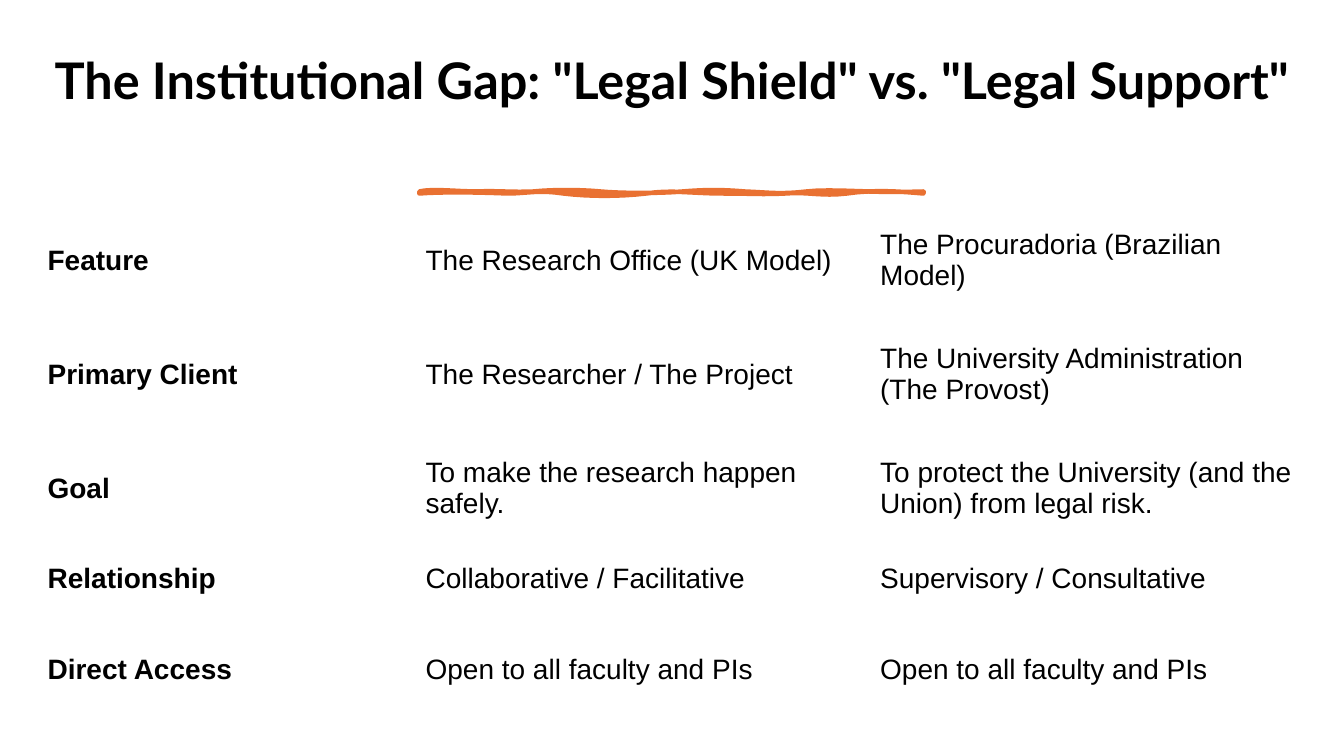
from dataclasses import dataclass

import pptx
import pptx.dml.color
import pptx.enum.text
import pptx.util

Pt = pptx.util.Pt
MIDDLE = pptx.enum.text.MSO_ANCHOR.MIDDLE
COLOURS = {"text": "000000", "accent": "E97132"}
CURVE_STEPS = 8


@dataclass(frozen=True)
class Comparison:
    feature: str
    research_office: str
    procuradoria: str
    height: float = 81.36


@dataclass(frozen=True)
class Curve:
    """A cubic curve that starts where the previous one ended."""
    control_1: tuple[float, float]
    control_2: tuple[float, float]
    end: tuple[float, float]


COLUMN_WIDTHS = (270, 324.72, 313.92)
COMPARISONS = (
    Comparison("Feature", "The Research Office (UK Model)",
               "The Procuradoria (Brazilian Model)"),
    Comparison("Primary Client", "The Researcher / The Project",
               "The University Administration (The Provost)"),
    Comparison("Goal", "To make the research happen safely.",
               "To protect the University (and the Union) from legal risk."),
    Comparison("Relationship", "Collaborative / Facilitative",
               "Supervisory / Consultative", 48.24),
    Comparison("Direct Access", "Open to all faculty and PIs",
               "Open to all faculty and PIs"),
)

STROKE_START = (299.5, 136.8)
STROKE_CURVES = (
    Curve((308.2, 134.6), (326.9, 136.8), (340.6, 136.8)),
    Curve((354.2, 136.1), (366.5, 137.5), (380.9, 136.8)),
    Curve((395.3, 135.4), (413.3, 135.4), (429.1, 136.8)),
    Curve((444.2, 138.2), (470.2, 138.2), (487.4, 136.8)),
    Curve((505.4, 135.4), (514.1, 135.4), (532.1, 136.8)),
    Curve((549.4, 137.5), (557.3, 139), (576, 136.8)),
    Curve((594.7, 134.6), (624.2, 138.2), (659.5, 136.8)),
    Curve((660.2, 137.5), (659.5, 137.5), (659.5, 138.2)),
    Curve((644.4, 136.8), (622.8, 135.4), (604.8, 138.2)),
    Curve((586.8, 140.4), (576.7, 136.8), (560.9, 138.2)),
    Curve((544.3, 139), (537.8, 138.2), (516.2, 138.2)),
    Curve((494.6, 138.2), (480.2, 135.4), (461.5, 138.2)),
    Curve((442.1, 140.4), (421.2, 140.4), (402.5, 138.2)),
    Curve((384.5, 135.4), (376.6, 138.2), (362.2, 138.2)),
    Curve((347.8, 137.5), (315.4, 136.8), (299.5, 138.2)),
)


def colour(name: str) -> pptx.dml.color.RGBColor:
    return pptx.dml.color.RGBColor.from_string(COLOURS[name])


def style_font(font, name: str, size: float, bold: bool) -> None:
    font.name = name
    font.size = Pt(size)
    font.bold = bold
    font.color.rgb = colour("text")


def add_title(page, text: str) -> None:
    box = page.shapes.add_textbox(Pt(0), Pt(33.12), Pt(960), Pt(98.64))
    frame = box.text_frame
    frame.word_wrap = True
    frame.vertical_anchor = MIDDLE
    frame.margin_bottom = Pt(49)
    frame.text = text
    para = frame.paragraphs[0]
    para.alignment = pptx.enum.text.PP_ALIGN.CENTER
    para.line_spacing = 0.9
    style_font(para.runs[0].font, "Lato", 36, True)


def flatten(start: tuple[float, float], curve: Curve) -> list[tuple[int, int]]:
    """Return points along a cubic curve, without its start."""
    points = []
    for step in range(1, CURVE_STEPS + 1):
        t = step / CURVE_STEPS
        weights = ((1 - t) ** 3, 3 * t * (1 - t) ** 2, 3 * t ** 2 * (1 - t), t ** 3)
        knots = (start, curve.control_1, curve.control_2, curve.end)
        x, y = (sum(w * knot[axis] for w, knot in zip(weights, knots)) for axis in (0, 1))
        points.append((Pt(x), Pt(y)))
    return points


def add_brush_stroke(page) -> None:
    builder = page.shapes.build_freeform(Pt(STROKE_START[0]), Pt(STROKE_START[1]))
    points = []
    start = STROKE_START
    for curve in STROKE_CURVES:
        points += flatten(start, curve)
        start = curve.end
    builder.add_line_segments(points, close=True)
    stroke = builder.convert_to_shape()
    stroke.shadow.inherit = False
    stroke.fill.solid()
    stroke.fill.fore_color.rgb = colour("accent")
    stroke.line.color.rgb = colour("accent")
    stroke.line.width = Pt(3.25)


def fill_cell(cell, text: str, bold: bool) -> None:
    cell.fill.background()
    cell.vertical_anchor = MIDDLE
    cell.margin_left = cell.margin_right = Pt(8)
    cell.margin_top = cell.margin_bottom = Pt(4)
    cell.text_frame.text = text
    style_font(cell.text_frame.paragraphs[0].runs[0].font, "Arial", 20, bold)


def add_comparison_table(page) -> None:
    frame = page.shapes.add_table(
        len(COMPARISONS), len(COLUMN_WIDTHS), Pt(26), Pt(145.44),
        Pt(sum(COLUMN_WIDTHS)), Pt(sum(row.height for row in COMPARISONS)))
    table = frame.table
    table.first_row = table.horz_banding = False
    for column, width in zip(table.columns, COLUMN_WIDTHS):
        column.width = Pt(width)
    for row, comparison in zip(table.rows, COMPARISONS):
        row.height = Pt(comparison.height)
        texts = (comparison.feature, comparison.research_office, comparison.procuradoria)
        for index, text in enumerate(texts):
            fill_cell(row.cells[index], text, bold=index == 0)


def main() -> None:
    deck = pptx.Presentation()
    deck.slide_width, deck.slide_height = Pt(960), Pt(540)
    page = deck.slides.add_slide(deck.slide_layouts[6])
    add_title(page, 'The Institutional Gap: "Legal Shield" vs. "Legal Support"')
    add_brush_stroke(page)
    add_comparison_table(page)
    deck.save("out.pptx")


if __name__ == "__main__":
    main()
